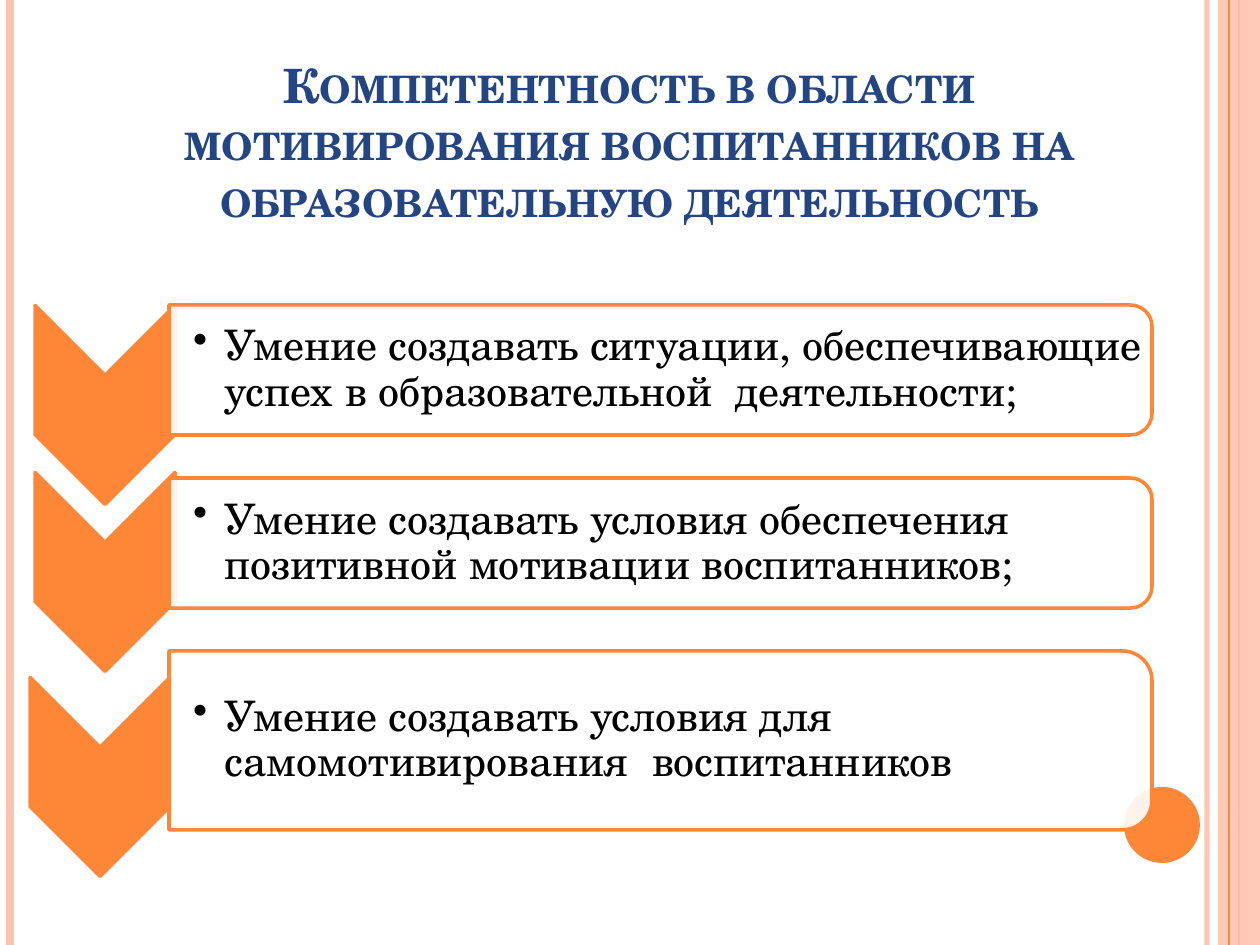
import pptx
import pptx.util
import pptx.dml.color
import pptx.enum.shapes
import pptx.enum.text
import pptx.oxml
import pptx.oxml.ns

SHAPE = pptx.enum.shapes.MSO_SHAPE
ANCHOR = pptx.enum.text.MSO_ANCHOR
FONT = "TeX Gyre Schola"
ORANGE, PEACH, WHITE, BLUE, BLACK = "FE8637", "FEC3AE", "FFFFFF", "244583", "000000"
WIDTH, HEIGHT = 1260, 945

# Content
TITLE = "Компетентность в области мотивирования воспитанников на образовательную деятельность"
# text, bar height, chevron centre x, chevron centre y
SKILLS = [
    ("Умение создавать ситуации, обеспечивающие успех в образовательной  деятельности;", 130, 105, 405),
    ("Умение создавать условия обеспечения позитивной мотивации воспитанников;", 130, 105, 572),
    ("Умение создавать условия для самомотивирования  воспитанников", 179, 100, 777),
]
BAR_LEFT, BAR_TOP, BAR_WIDTH, BAR_GAP = 169, 305, 983, 43
TEXT_WIDTH = 976
CHEVRON_LENGTH, CHEVRON_WIDTH = 199, 140
# x, colour, line width in points, opacity in percent
BACK_STRIPES = [(1207, PEACH, 3, 93), (10, PEACH, 4.5, 100), (1239, ORANGE, 1.5, 100)]
FRONT_STRIPES = [(1229, ORANGE, 0.75, 100)]


def px(length):
    return pptx.util.Emu(round(length * 914400 / 126))


def rgb(colour):
    return pptx.dml.color.RGBColor.from_string(colour)


def add_element(parent, tag, **attributes):
    element = pptx.oxml.parse_xml(f"<a:{tag} {pptx.oxml.ns.nsdecls('a')}/>")
    for name, value in attributes.items():
        element.set(name, str(value))
    parent.append(element)


def set_opacity(owner, percent):
    if percent < 100:
        colour = next(owner.iter(pptx.oxml.ns.qn("a:srgbClr")))
        add_element(colour, "alpha", val=percent * 1000)


def add_shape(slide, kind, box, fill, opacity=100, outline=None, rotation=0):
    shape = slide.shapes.add_shape(kind, *map(px, box))
    shape.shadow.inherit = False
    shape.rotation = rotation
    shape.fill.solid()
    shape.fill.fore_color.rgb = rgb(fill)
    set_opacity(shape._element.spPr, opacity)
    if outline:
        shape.line.color.rgb = rgb(outline)
        shape.line.width = pptx.util.Pt(2)
    else:
        shape.line.fill.background()


def add_turned(slide, kind, centre_x, centre_y, length, breadth, fill, opacity=100):
    box = (centre_x - length / 2, centre_y - breadth / 2, length, breadth)
    add_shape(slide, kind, box, fill, opacity, ORANGE, 90)


def add_stripes(slide, stripes):
    for x, colour, width, opacity in stripes:
        line = slide.shapes.add_connector(
            pptx.enum.shapes.MSO_CONNECTOR.STRAIGHT, px(x), 0, px(x), px(HEIGHT))
        line.line.color.rgb = rgb(colour)
        line.line.width = pptx.util.Pt(width)
        set_opacity(line._element.spPr, opacity)
        add_element(line._element.spPr, "effectLst")


def set_font(paragraph, size, colour):
    paragraph.font.name = FONT
    paragraph.font.size = pptx.util.Pt(size)
    paragraph.font.color.rgb = rgb(colour)


def add_skill_text(slide, text, top, height):
    box = slide.shapes.add_textbox(px(BAR_LEFT), px(top), px(TEXT_WIDTH), px(height))
    frame = box.text_frame
    frame.word_wrap = True
    frame.vertical_anchor = ANCHOR.MIDDLE
    frame.margin_left = px(24)
    frame.margin_right = frame.margin_top = frame.margin_bottom = px(2)
    paragraph = frame.paragraphs[0]
    paragraph.text = text
    paragraph.line_spacing = 0.9
    set_font(paragraph, 24, BLACK)
    properties = paragraph._p.get_or_add_pPr()
    properties.set("marL", "228600")
    properties.set("indent", "-228600")
    bullet = pptx.oxml.parse_xml(f'<a:buChar {pptx.oxml.ns.nsdecls("a")} char="•"/>')
    properties.insert_element_before(bullet, "a:tabLst", "a:defRPr", "a:extLst")


def main():
    presentation = pptx.Presentation()
    presentation.slide_width, presentation.slide_height = px(WIDTH), px(HEIGHT)
    slide = presentation.slides.add_slide(presentation.slide_layouts[5])

    # Side stripes and corner disc
    add_stripes(slide, BACK_STRIPES)
    add_shape(slide, SHAPE.RECTANGLE, (1218, 0, 42, HEIGHT), PEACH, 87)
    add_stripes(slide, FRONT_STRIPES)
    add_shape(slide, SHAPE.OVAL, (1124, 787, 76, 76), ORANGE)

    # Title
    title = slide.shapes.title
    title.left, title.top, title.width, title.height = map(px, (115, 76, 1029, 157))
    frame = title.text_frame
    frame.text = TITLE
    frame.word_wrap = True
    frame.auto_size = pptx.enum.text.MSO_AUTO_SIZE.NONE
    frame.vertical_anchor = ANCHOR.BOTTOM
    paragraph = frame.paragraphs[0]
    paragraph.alignment = pptx.enum.text.PP_ALIGN.CENTER
    set_font(paragraph, 27, BLUE)
    paragraph.font.bold = True
    paragraph.runs[0]._r.get_or_add_rPr().set("cap", "small")

    # Chevron, bar and text of each skill
    top = BAR_TOP
    for text, height, chevron_x, chevron_y in SKILLS:
        add_turned(slide, SHAPE.CHEVRON, chevron_x, chevron_y,
                   CHEVRON_LENGTH, CHEVRON_WIDTH, ORANGE)
        add_turned(slide, SHAPE.ROUND_2_SAME_RECTANGLE, BAR_LEFT + BAR_WIDTH / 2,
                   top + height / 2, height, BAR_WIDTH, WHITE, 90)
        add_skill_text(slide, text, top, height)
        top += height + BAR_GAP

    presentation.save("out.pptx")


if __name__ == "__main__":
    main()
